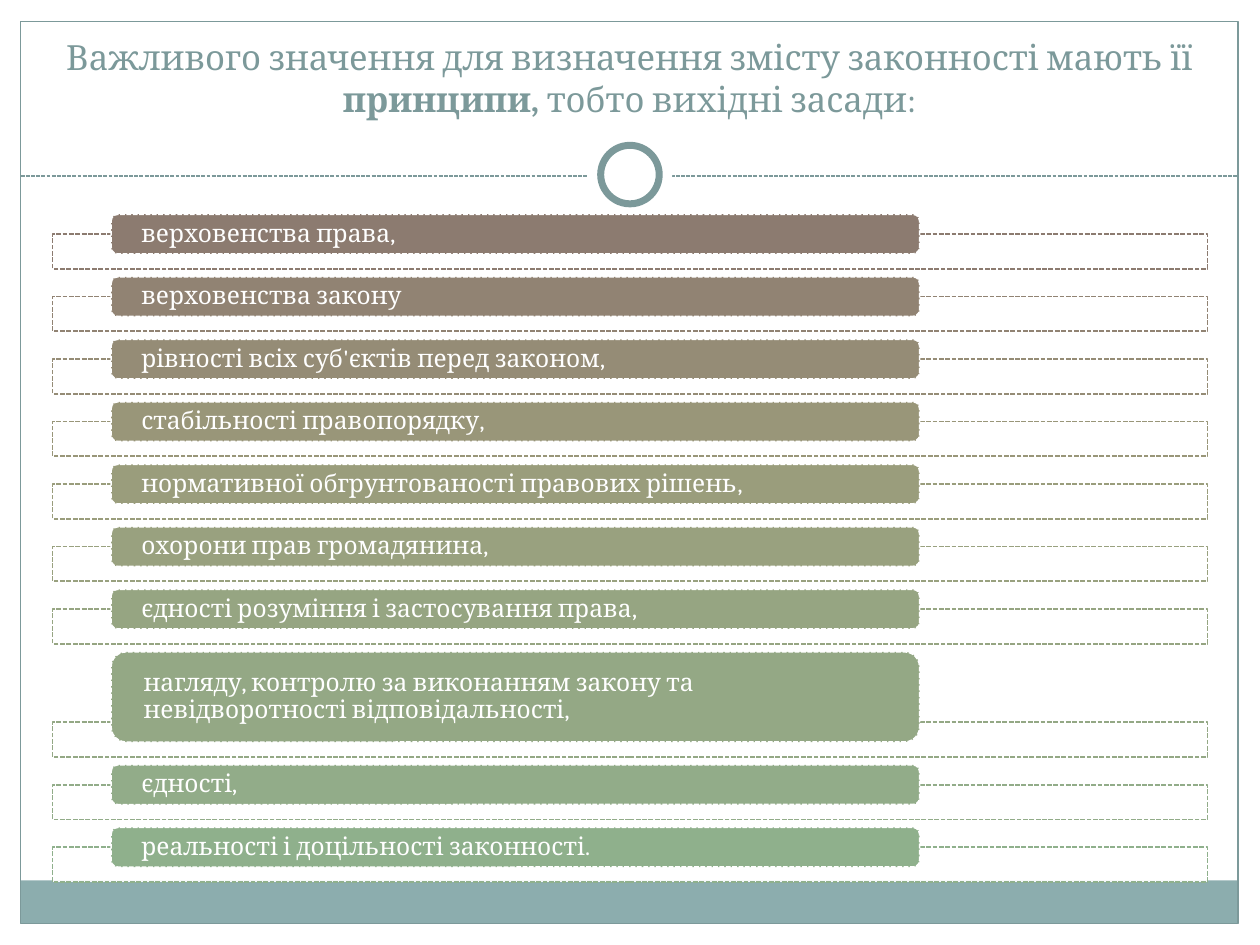
from dataclasses import dataclass
from typing import Optional

from lxml.etree import SubElement
from pptx import Presentation
from pptx.dml.color import RGBColor
from pptx.enum.dml import MSO_LINE_DASH_STYLE as Dash
from pptx.enum.shapes import MSO_CONNECTOR_TYPE as Connector
from pptx.enum.shapes import MSO_AUTO_SHAPE_TYPE as Shape
from pptx.enum.text import MSO_AUTO_SIZE as AutoSize
from pptx.enum.text import MSO_VERTICAL_ANCHOR as Anchor
from pptx.enum.text import PP_PARAGRAPH_ALIGNMENT as Align
from pptx.oxml.ns import qn
from pptx.util import Cm, Pt

FONT = "Cambria"
COLORS = {"white": "FFFFFF", "accent": "7C999A", "band": "8CADAE"}

# Principle list geometry, in centimetres
LIST_TOP = 4.32
PILL_LEFT, PILL_WIDTH = 2.24, 16.3
PILL_HEIGHT, TALL_HEIGHT = 0.8, 1.82
PILL_GAP = 0.46
FRAME_LEFT, FRAME_WIDTH, FRAME_HEIGHT = 1.06, 23.28, 0.7
FRAME_OVERLAP = 0.4


@dataclass
class Area:
    left: float
    top: float
    width: float
    height: float

    def lengths(self) -> tuple:
        return Cm(self.left), Cm(self.top), Cm(self.width), Cm(self.height)


@dataclass
class Outline:
    color: str
    width: float
    dash: Optional[Dash] = None


@dataclass
class Principle:
    text: str
    color: str
    height: float = PILL_HEIGHT


PRINCIPLES = [
    Principle("верховенства права,", "8C7B70"),
    Principle("верховенства закону", "918373"),
    Principle("рівності всіх суб'єктів перед законом,", "958C76"),
    Principle("стабільності правопорядку,", "999679"),
    Principle("нормативної обгрунтованості правових рішень,", "9A9D7C"),
    Principle("охорони прав громадянина,", "99A17F"),
    Principle("єдності розуміння і застосування права,", "96A582"),
    Principle("нагляду, контролю за виконанням закону та "
              "невідворотності відповідальності,", "94A885", TALL_HEIGHT),
    Principle("єдності,", "92AC89"),
    Principle("реальності і доцільності законності.", "8FB08C"),
]


def apply(target, values: dict) -> None:
    for name, value in values.items():
        setattr(target, name, value)


def set_line(line, outline: Outline) -> None:
    line.color.rgb = RGBColor.from_string(outline.color)
    line.width = Pt(outline.width)
    if outline.dash:
        line.dash_style = outline.dash


def add_box(page, kind: Shape, area: Area, fill: Optional[str] = None,
            outline: Optional[Outline] = None, opacity: int = 100):
    box = page.shapes.add_shape(kind, *area.lengths())
    box.shadow.inherit = False
    if fill:
        box.fill.solid()
        box.fill.fore_color.rgb = RGBColor.from_string(fill)
    else:
        box.fill.background()
    if opacity < 100:
        color = box._element.spPr.find(qn("a:solidFill"))[0]
        SubElement(color, qn("a:alpha")).set("val", str(opacity * 1000))
    if outline:
        set_line(box.line, outline)
    else:
        box.line.fill.background()
    return box


def add_span(para, text: str, size: float, color: str, bold: bool = False) -> None:
    span = para.add_run()
    span.text = text
    apply(span.font, {"name": FONT, "size": Pt(size), "bold": bold})
    span.font.color.rgb = RGBColor.from_string(color)


def add_decoration(page) -> None:
    accent = COLORS["accent"]
    add_box(page, Shape.RECTANGLE, Area(0.42, 17.75, 24.54, 0.87), COLORS["band"])
    add_box(page, Shape.RECTANGLE, Area(0.42, 0.43, 24.54, 18.19),
            outline=Outline(accent, 0.75))
    divider = page.shapes.add_connector(
        Connector.STRAIGHT, Cm(0.42), Cm(3.55), Cm(24.96), Cm(3.55))
    set_line(divider.line, Outline(accent, 0.75, Dash.SQUARE_DOT))
    SubElement(divider._element.spPr, qn("a:effectLst"))
    # Ring on a white disc that interrupts the divider
    add_box(page, Shape.OVAL, Area(11.85, 2.67, 1.7, 1.7), COLORS["white"])
    add_box(page, Shape.OVAL, Area(12.11, 2.93, 1.18, 1.18), COLORS["white"],
            Outline(accent, 4))


def fill_title(page) -> None:
    title = page.shapes.title
    area = Area(0.84, 0.64, 23.7, 2.74).lengths()
    apply(title, dict(zip(("left", "top", "width", "height"), area)))
    frame = title.text_frame
    apply(frame, {"auto_size": AutoSize.NONE, "word_wrap": True,
                  "vertical_anchor": Anchor.BOTTOM, "margin_bottom": Cm(0.97)})
    para = frame.paragraphs[0]
    para.alignment = Align.CENTER
    for text, bold in (
        ("Важливого значення для визначення змісту законності мають її ", False),
        ("принципи,", True),
        (" тобто вихідні засади:", False),
    ):
        add_span(para, text, 19.8, COLORS["accent"], bold)


def add_principle(page, item: Principle, top: float) -> None:
    white = COLORS["white"]
    frame_top = top + item.height - FRAME_OVERLAP
    add_box(page, Shape.RECTANGLE,
            Area(FRAME_LEFT, frame_top, FRAME_WIDTH, FRAME_HEIGHT),
            white, Outline(item.color, 0.9, Dash.SQUARE_DOT), opacity=90)
    pill = add_box(page, Shape.ROUNDED_RECTANGLE,
                   Area(PILL_LEFT, top, PILL_WIDTH, item.height),
                   item.color, Outline(white, 0.9, Dash.SQUARE_DOT))
    apply(pill.text_frame, {
        "word_wrap": True, "vertical_anchor": Anchor.MIDDLE,
        "margin_left": Cm(0.57), "margin_right": Cm(0.57),
        "margin_top": 0, "margin_bottom": 0,
    })
    para = pill.text_frame.paragraphs[0]
    apply(para, {"alignment": Align.LEFT, "line_spacing": 0.9})
    add_span(para, item.text, 14, white)


def main() -> None:
    deck = Presentation()
    apply(deck, {"slide_width": Cm(25.4), "slide_height": Cm(19.05)})
    page = deck.slides.add_slide(deck.slide_layouts[5])
    add_decoration(page)
    fill_title(page)
    top = LIST_TOP
    for item in PRINCIPLES:
        add_principle(page, item, top)
        top += item.height + PILL_GAP
    deck.save("out.pptx")


if __name__ == "__main__":
    main()
